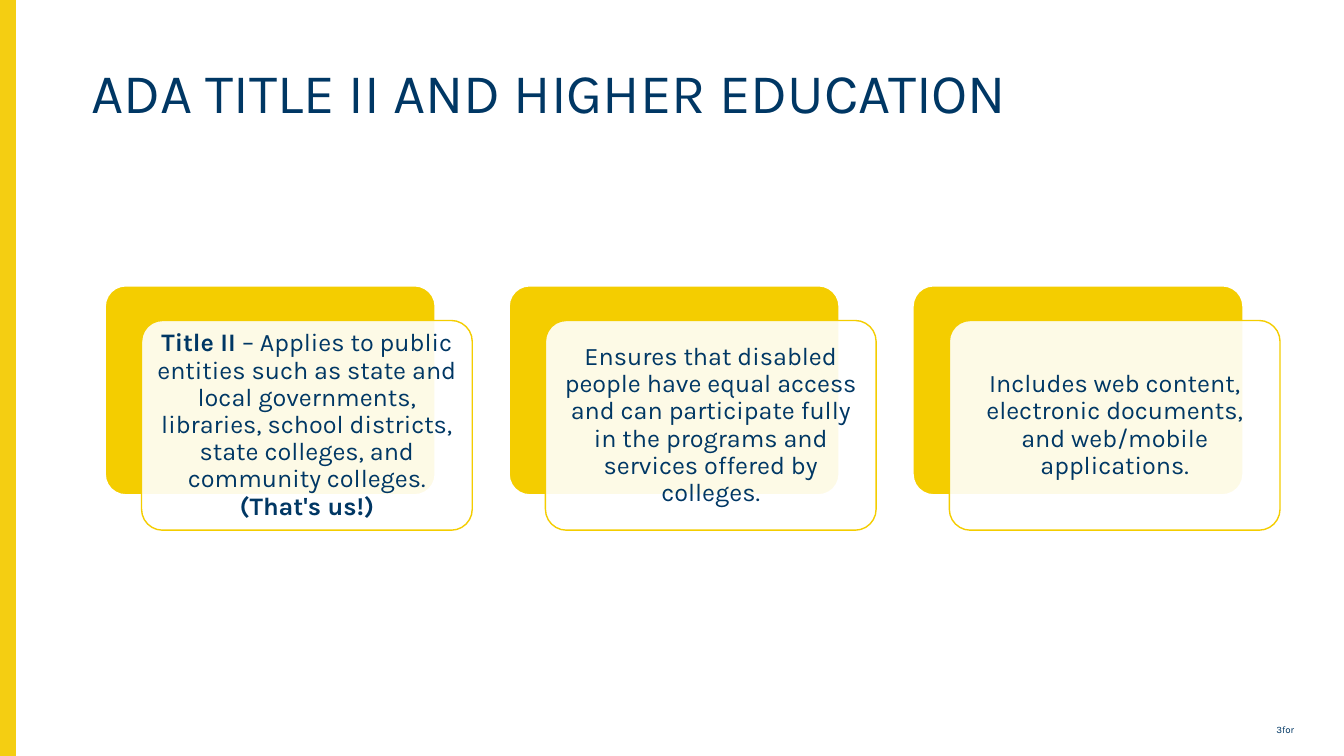
"""Build the slide on ADA Title II and higher education."""
from lxml import etree
from pptx import Presentation
from pptx.dml.color import RGBColor
from pptx.enum import shapes, text
from pptx.oxml.ns import qn
from pptx.util import Pt

TITLE = "ADA TITLE II AND HIGHER EDUCATION"
PAGE_LABEL = "3for"
CARDS = [
    [
        ("Title II ", True),
        ("– Applies to public entities such as state and local governments, "
         "libraries, school districts, state colleges, and community colleges. ", False),
        ("(That's us!)", True),
    ],
    [("Ensures that disabled people have equal access and can participate "
      "fully in the programs and services offered by colleges.", False)],
    [("Includes web content, electronic documents, and web/mobile applications.", False)],
]

THEME = {
    "font": "Karla",
    "navy": RGBColor.from_string("003764"),
    "gold": RGBColor.from_string("F4CD00"),
    "bar": RGBColor.from_string("F4CE12"),
    "white": RGBColor.from_string("FFFFFF"),
    "title_size": 40,
    "body_size": 18,
    "page_size": 7,
}
SLIDE_WIDTH, SLIDE_HEIGHT = 960, 540
CARD_LEFT, CARD_TOP, CARD_PITCH = 74.9, 203.9, 288.5
CARD_WIDTH, CARD_HEIGHT = 236.2, 149.8
FRONT_SHIFT_X, FRONT_SHIFT_Y = 26.2, 25
CARD_INSET = 5.1
CARD_OPACITY = 90


def apply_format(target, values):
    for name, value in values.items():
        setattr(target, name, value)


def add_block(slide, kind, box, fill, line, line_width):
    shape = slide.shapes.add_shape(kind, *map(Pt, box))
    shape.shadow.inherit = False
    shape.fill.solid()
    shape.fill.fore_color.rgb = fill
    shape.line.color.rgb = line
    shape.line.width = Pt(line_width)
    if kind == shapes.MSO_SHAPE.ROUNDED_RECTANGLE:
        shape.adjustments[0] = 0.1
    return shape


def write_text(shape, runs, size, align, anchor, inset=None):
    frame = shape.text_frame
    apply_format(frame, {"word_wrap": True, "vertical_anchor": anchor})
    if inset is not None:
        sides = ("left", "top", "right", "bottom")
        apply_format(frame, {f"margin_{side}": Pt(inset) for side in sides})
    paragraph = frame.paragraphs[0]
    apply_format(paragraph, {"alignment": align, "line_spacing": 0.9})
    for words, bold in runs:
        run = paragraph.add_run()
        run.text = words
        apply_format(run.font, {"name": THEME["font"], "size": Pt(size), "bold": bold})
        run.font.color.rgb = THEME["navy"]


def add_label(slide, box, words, size, align, anchor):
    label = slide.shapes.add_textbox(*map(Pt, box))
    write_text(label, [(words, False)], size, align, anchor)


def set_opacity(shape, percent):
    color = shape.fill._xPr.find(qn("a:solidFill"))[0]
    etree.SubElement(color, qn("a:alpha")).set("val", str(percent * 1000))


def add_card(slide, index, runs):
    rounded = shapes.MSO_SHAPE.ROUNDED_RECTANGLE
    left = CARD_LEFT + index * CARD_PITCH
    size = (CARD_WIDTH, CARD_HEIGHT)
    add_block(slide, rounded, (left, CARD_TOP, *size), THEME["gold"], THEME["white"], 1.5)
    front_box = (left + FRONT_SHIFT_X, CARD_TOP + FRONT_SHIFT_Y, *size)
    front = add_block(slide, rounded, front_box, THEME["white"], THEME["gold"], 1)
    set_opacity(front, CARD_OPACITY)
    write_text(front, runs, THEME["body_size"], text.PP_ALIGN.CENTER,
               text.MSO_ANCHOR.MIDDLE, CARD_INSET)


def main():
    presentation = Presentation()
    apply_format(presentation, {"slide_width": Pt(SLIDE_WIDTH), "slide_height": Pt(SLIDE_HEIGHT)})
    slide = presentation.slides.add_slide(presentation.slide_layouts[6])
    add_block(slide, shapes.MSO_SHAPE.RECTANGLE, (0, 0, 10.8, SLIDE_HEIGHT),
              THEME["bar"], THEME["bar"], 1)
    add_label(slide, (58.3, 43.2, 872, 62), TITLE, THEME["title_size"],
              text.PP_ALIGN.LEFT, text.MSO_ANCHOR.TOP)
    for index, runs in enumerate(CARDS):
        add_card(slide, index, runs)
    add_label(slide, (883.4, 514, 48.2, 15), PAGE_LABEL, THEME["page_size"],
              text.PP_ALIGN.RIGHT, text.MSO_ANCHOR.MIDDLE)
    presentation.save("out.pptx")


if __name__ == "__main__":
    main()
